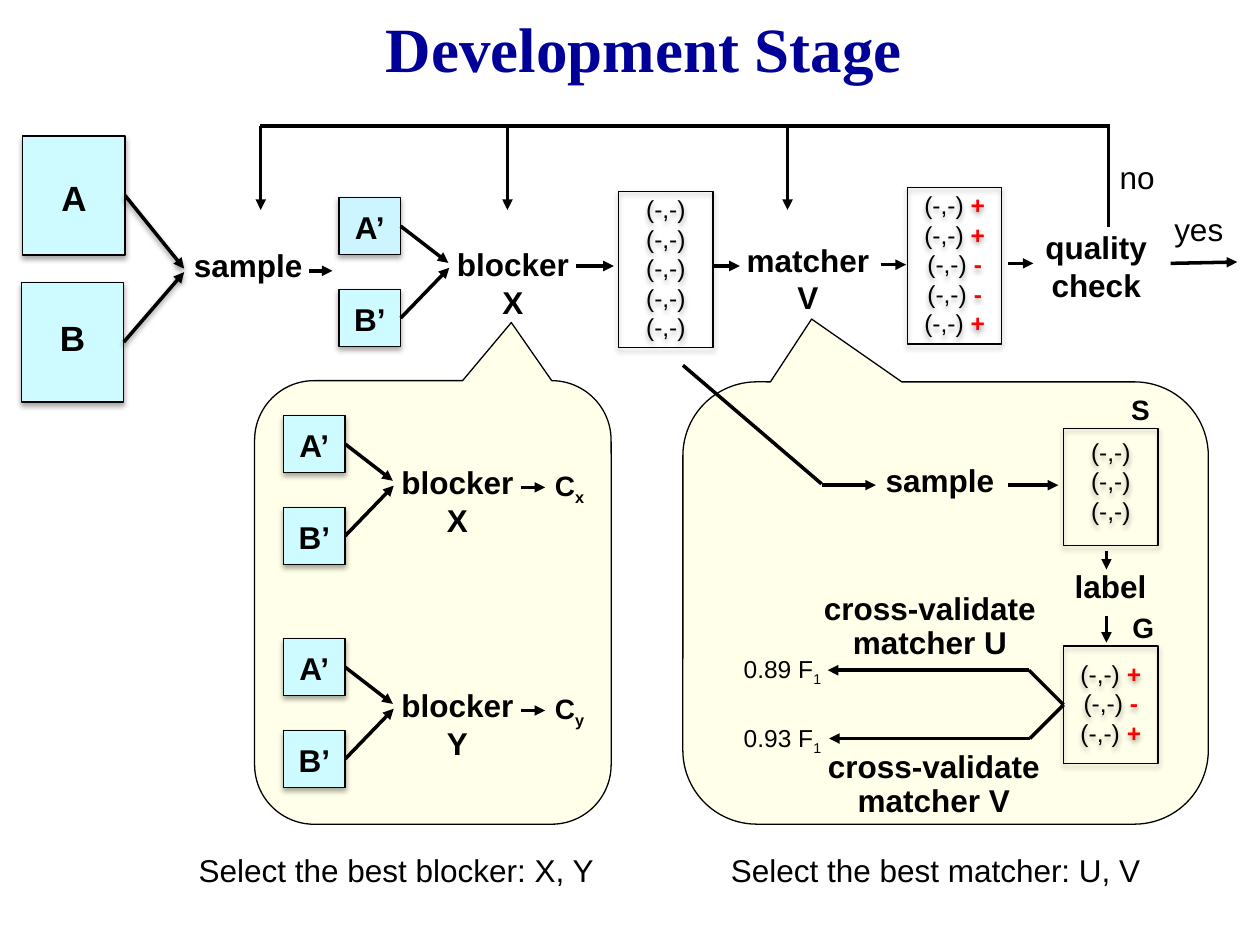
"""Build the Development Stage slide: entity matching workflow with blocker and matcher selection."""
from lxml import etree
from pptx import Presentation
from pptx.dml.color import RGBColor
from pptx.enum import shapes, text
from pptx.oxml.ns import qn
from pptx.util import Pt

THEME = dict(ink="000000", title="000099", mark="FF0000", table="CDFBFF", tint="CCF5FF",
             note="FFFFEA", sans="Arial", serif="Times New Roman",
             head=36, big=20, body=18, small=16, row=14, edge=0.75, wire=2)
ALIGN = {"c": text.PP_ALIGN.CENTER, "l": text.PP_ALIGN.LEFT}

PAIR = "(-,-)"
PLUS = [PAIR + " ", ("+", "mark")]
MINUS = [PAIR + " ", ("-", "mark")]

NOTES = [((145.5, 217.5, 203.75, 253.5), (0.22, -0.631, 0.167)),
         ((390.25, 218.25, 300.25, 252.75), (-0.255, -0.642, 0.167))]

TABLES = [("A", (13, 77.75, 58.5, 68), 23, (105.25, 153.5)),
          ("B", (12.25, 161.25, 58.5, 68.5), 19.5, (105.25, 155.5))]

LISTS = {"cand": ([PAIR] * 5, (353.5, 109.5, 54, 89.25), 1.5),
         "pred": ([PLUS, PLUS, MINUS, MINUS, PLUS], (518.5, 107.25, 54, 89.25), 1.5),
         "S": ([PAIR] * 3, (607.75, 244.75, 54, 67), 5),
         "G": ([PLUS, MINUS, PLUS], (607.75, 369.25, 54, 67), 7.25)}

UNITS = [(193.75, 113, "X", None, 21.5, "tint"),
         (162, 237.5, "X", "x", 14, "table"),
         (162, 365, "Y", "y", 14, "table")]

BOLD = dict(bold=True)
LEFT = dict(bold=True, align="l")
TIGHT = dict(bold=True, gap=0.9)
TAG = dict(bold=True, align="l", size="small")
TEXTS = [
    (["Development Stage"], (62, 0, 612, 54),
     dict(bold=True, size="head", font="serif", color="title", mid=True)),
    (["yes"], (635.75, 116.5, 98.5, 31), {}),
    (["no"], (600.5, 87, 98.5, 29), {}),
    (["sample"], (102.25, 136.75, 79.25, 29), BOLD),
    (["matcher V"], (416.25, 134, 90.75, 51), BOLD),
    (["quality ", "check "], (568, 126.75, 121.75, 51), BOLD),
    (["sample"], (499, 260, 79.25, 29), LEFT),
    (["label"], (607, 320.5, 67.75, 29), LEFT),
    (["S"], (639.25, 221, 34.5, 26.5), TAG),
    (["G"], (640, 345.5, 34.5, 26.5), TAG),
    (["cross-validate", "matcher U"], (444.25, 335.5, 174.25, 46.75), TIGHT),
    (["cross-validate", "matcher V"], (446.5, 425.5, 174.25, 46.75), TIGHT),
    ([["0.89 F", ("1", "sub")]], (407.5, 370, 79.25, 24.5), dict(size="row")),
    ([["0.93 F", ("1", "sub")]], (414, 409.75, 66.25, 24.5), dict(size="row")),
    (["Select the best matcher: U, V"], (410.5, 482.5, 273, 29), dict(align="l")),
    (["Select the best blocker: X, Y"], (106.5, 482.5, 244, 29), dict(align="l")),
]

LOOP_Y, DROP_Y = 72, 120
DROPS = [149, 290, 450]
LINES = [(148.75, LOOP_Y, 634.25, LOOP_Y), (633.5, 129.5, 633.5, LOOP_Y),
         (390.25, 208.75, 469.5, 276.5)]
ARROWS = [(176.5, 154.75, 190, 154.75), (408.25, 152, 422.75, 152),
          (503.25, 151.25, 517.75, 151.25), (576, 150.5, 590.5, 150.5),
          (669, 150.5, 707, 149.75), (469.5, 277.25, 500.5, 277.25),
          (576, 277.25, 604.75, 277.25), (632.25, 314.75, 632.25, 325.5),
          (632.25, 352, 632.25, 367.25)]
FORKS = [(588, 383, 473), (588.5, 422, 473.75)]


def rgb(name):
    return RGBColor.from_string(THEME[name])


def shade(props, alpha):
    """Fill the effect list of a shape with a soft shadow."""
    node = props.find(qn("a:effectLst"))
    drop = etree.SubElement(node, qn("a:outerShdw"), blurRad=str(Pt(3.1)),
                            dist=str(Pt(1.8)), dir="5400000", rotWithShape="0")
    tone = etree.SubElement(drop, qn("a:srgbClr"), val=THEME["ink"])
    etree.SubElement(tone, qn("a:alpha"), val=str(alpha * 1000))


def write(frame, paras, size="body", font="sans", color="ink", bold=False,
          align="c", gap=None, mid=False, top=3.6):
    """Write paragraphs of plain or styled runs into a text frame."""
    frame.word_wrap = True
    frame.margin_top = Pt(top)
    frame.vertical_anchor = text.MSO_ANCHOR.MIDDLE if mid else text.MSO_ANCHOR.TOP
    for i, runs in enumerate(paras):
        para = frame.add_paragraph() if i else frame.paragraphs[0]
        para.alignment = ALIGN[align]
        if gap:
            para.line_spacing = gap
        for item in [runs] if isinstance(runs, str) else runs:
            words, kind = (item, None) if isinstance(item, str) else item
            run = para.add_run()
            run.text = words
            run.font.name, run.font.size = THEME[font], Pt(THEME[size])
            run.font.bold = bold or kind == "mark"
            run.font.color.rgb = rgb("mark" if kind == "mark" else color)
            if kind == "sub":
                run._r.get_or_add_rPr().set("baseline", "-25000")


def label(slide, paras, area, **style):
    write(slide.shapes.add_textbox(*map(Pt, area)).text_frame, paras, **style)


def box(slide, area, fill=None, kind=shapes.MSO_SHAPE.RECTANGLE, soft=True):
    shape = slide.shapes.add_shape(kind, *map(Pt, area))
    shape.shadow.inherit = False
    if fill:
        shape.fill.solid()
        shape.fill.fore_color.rgb = rgb(fill)
    else:
        shape.fill.background()
    shape.line.color.rgb = rgb("ink")
    shape.line.width = Pt(THEME["edge"])
    if soft:
        shade(shape._element.spPr, 35)
    return shape


def wire(slide, ends, arrow=True, start=None, side=3, soft=False):
    """Draw a straight line, optionally joined to a box side at its start."""
    line = slide.shapes.add_connector(shapes.MSO_CONNECTOR.STRAIGHT, *map(Pt, ends))
    if start is not None:
        line.begin_connect(start, side)
    line.line.color.rgb = rgb("ink")
    line.line.width = Pt(THEME["wire"])
    props = line._element.spPr
    if arrow:
        etree.SubElement(props.find(qn("a:ln")), qn("a:tailEnd"), type="triangle")
    etree.SubElement(props, qn("a:effectLst"))
    if soft:
        shade(props, 38)


def unit(slide, x, y, name, sub, reach, tint):
    """Draw tables A’ and B’ feeding one blocker and its output arrow."""
    for word, down, fill, aim in (("A’", 0, tint, (62.5, 37.25)),
                                  ("B’", 52.5, "table", (63, 40))):
        cell = box(slide, (x, y + down, 35.25, 32.5), fill)
        write(cell.text_frame, [word], bold=True, top=6)
        wire(slide, (x, y, x + aim[0], y + aim[1]), start=cell)
    label(slide, ["blocker " + name], (x + 58.75, y + 23.5, 81.25, 51), bold=True)
    out = y + (41 if sub else 39)
    wire(slide, (x + 135.5, out, x + 135.5 + reach, out))
    if sub:
        label(slide, [["C", (sub, "sub")]], (x + 148, y + 26.75, 34.5, 26.5), **TAG)


def main():
    deck = Presentation()
    deck.slide_width, deck.slide_height = Pt(720), Pt(540)
    slide = deck.slides.add_slide(deck.slide_layouts[6])
    for area, adjust in NOTES:
        note = box(slide, area, "note", shapes.MSO_SHAPE.ROUNDED_RECTANGULAR_CALLOUT, False)
        for i, value in enumerate(adjust):
            note.adjustments[i] = value
    for word, area, top, aim in TABLES:
        table = box(slide, area, "table")
        write(table.text_frame, [word], bold=True, size="big", top=top)
        wire(slide, area[:2] + aim, start=table, soft=True)
    for spot in UNITS:
        unit(slide, *spot)
    made = {}
    for name, (rows, area, top) in LISTS.items():
        made[name] = box(slide, area)
        write(made[name].text_frame, rows, size="row", top=top)
    for paras, area, style in TEXTS:
        label(slide, paras, area, **style)
    for ends in LINES:
        wire(slide, ends, arrow=False)
    for ends in ARROWS + [(x, LOOP_Y, x, DROP_Y) for x in DROPS]:
        wire(slide, ends)
    for bend, y, tip in FORKS:
        wire(slide, (bend, y, bend, y), arrow=False, start=made["G"], side=1)
        wire(slide, (bend, y, tip, y))
    deck.save("out.pptx")


if __name__ == "__main__":
    main()
